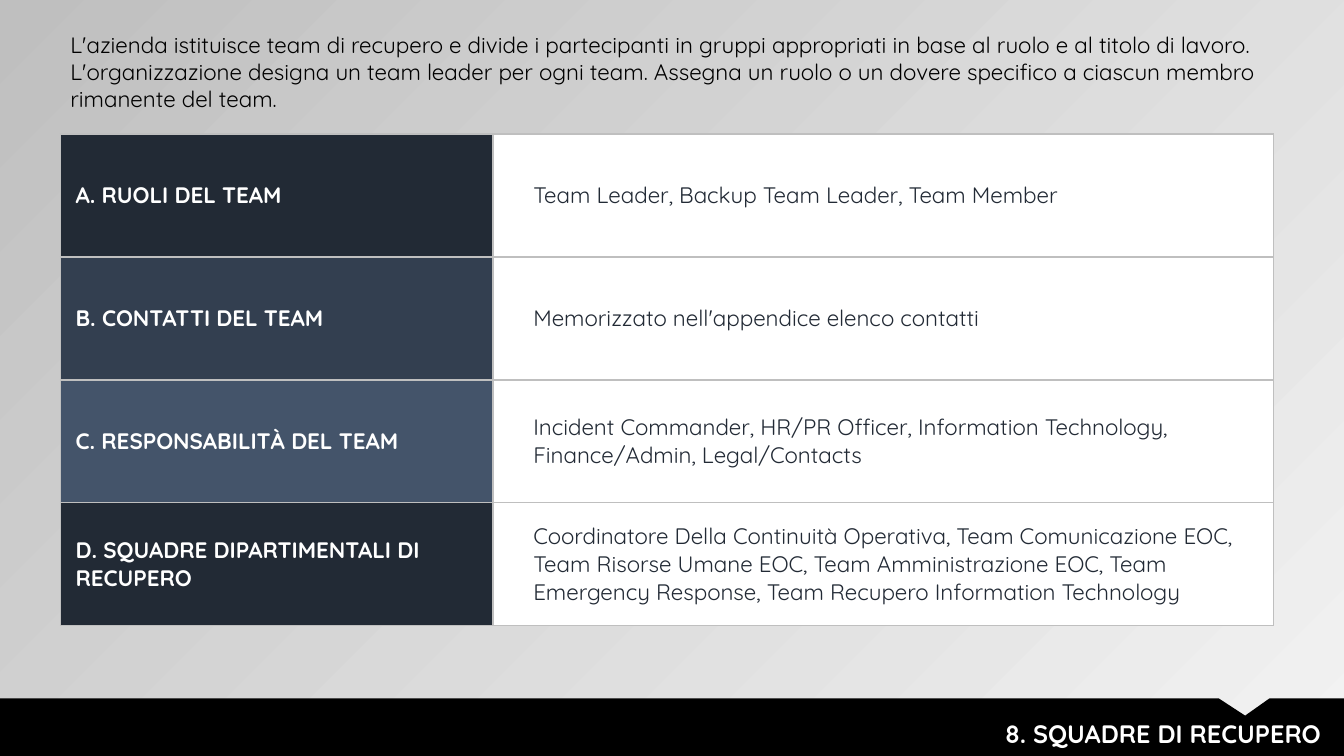
from pptx import Presentation
from pptx.dml.color import RGBColor
from pptx.enum.text import MSO_ANCHOR, MSO_AUTO_SIZE, PP_ALIGN
from pptx.oxml import parse_xml
from pptx.oxml.ns import nsdecls
from pptx.util import Pt

PX = 9144
HUE = {
    "navy": "222A35", "slate": "333F50", "steel": "44546A",
    "white": "FFFFFF", "black": "000000", "pale": "F2F2F2", "grey": "BFBFBF",
}


def tint(name):
    return RGBColor.from_string(HUE[name])


def style(frame, text, size, color, bold=False):
    frame.text = text
    frame.word_wrap = True
    font = frame.paragraphs[0].runs[0].font
    font.name = "Quicksand"
    font.size = Pt(size)
    font.bold = bold
    font.color.rgb = tint(color)


deck = Presentation()
deck.slide_width = 1333 * PX
deck.slide_height = 750 * PX
slide = deck.slides.add_slide(deck.slide_layouts[5])

back = slide.background.fill
back.gradient()
back.gradient_angle = 135
for stop, name in zip(back.gradient_stops, ["pale", "grey"]):
    stop.color.rgb = tint(name)

rows = [
    ("A. RUOLI DEL TEAM", "Team Leader, Backup Team Leader, Team Member", "navy"),
    ("B. CONTATTI DEL TEAM", "Memorizzato nell'appendice elenco contatti", "slate"),
    ("C. RESPONSABILITÀ DEL TEAM",
     "Incident Commander, HR/PR Officer, Information Technology, "
     "Finance/Admin, Legal/Contacts", "steel"),
    ("D. SQUADRE DIPARTIMENTALI DI RECUPERO",
     "Coordinatore Della Continuità Operativa, Team Comunicazione EOC, "
     "Team Risorse Umane EOC, Team Amministrazione EOC, "
     "Team Emergency Response, Team Recupero Information Technology", "navy"),
]
table = slide.shapes.add_table(
    len(rows), 2, 60 * PX, 133 * PX, 1203 * PX, 488 * PX).table
table.first_row = False
table.horz_banding = False
table.columns[0].width = 429 * PX
table.columns[1].width = 774 * PX

for i, (label, detail, shade) in enumerate(rows):
    table.rows[i].height = 122 * PX
    looks = [(label, shade, "white", True, 15), (detail, "white", "navy", False, 40)]
    for j, (text, fill, color, bold, left) in enumerate(looks):
        cell = table.cell(i, j)
        style(cell.text_frame, text, 16, color, bold)
        cell.vertical_anchor = MSO_ANCHOR.MIDDLE
        cell.margin_left = left * PX
        cell.margin_right = cell.margin_top = cell.margin_bottom = 15 * PX
        cell.fill.solid()
        cell.fill.fore_color.rgb = tint(fill)
        props = cell._tc.get_or_add_tcPr()
        for k, side in enumerate(["lnL", "lnR", "lnT", "lnB"]):
            props.insert(k, parse_xml(
                f'<a:{side} {nsdecls("a")} w="12700"><a:solidFill>'
                f'<a:srgbClr val="{HUE["grey"]}"/></a:solidFill></a:{side}>'))

pen = slide.shapes.build_freeform(0, 693, scale=PX)
pen.add_line_segments([
    (1209, 693), (1235, 710), (1259, 693), (1333, 693), (1333, 750), (0, 750)])
band = pen.convert_to_shape()
band.shadow.inherit = False
band.fill.solid()
band.fill.fore_color.rgb = tint("black")
band.line.fill.background()

title = slide.shapes.title
title.left, title.top = 414 * PX, 708 * PX
title.width, title.height = 906 * PX, 40 * PX
style(title.text_frame, "8. SQUADRE DI RECUPERO", 18, "white", True)
title.text_frame.auto_size = MSO_AUTO_SIZE.NONE
title.text_frame.vertical_anchor = MSO_ANCHOR.TOP
title.text_frame.paragraphs[0].alignment = PP_ALIGN.RIGHT
band.element.addnext(title.element)

intro = slide.shapes.add_textbox(60 * PX, 26 * PX, 1203 * PX, 91 * PX)
style(intro.text_frame,
      "L'azienda istituisce team di recupero e divide i partecipanti in gruppi "
      "appropriati in base al ruolo e al titolo di lavoro. L'organizzazione designa "
      "un team leader per ogni team. Assegna un ruolo o un dovere specifico a "
      "ciascun membro rimanente del team.", 16, "black")

deck.save("out.pptx")
